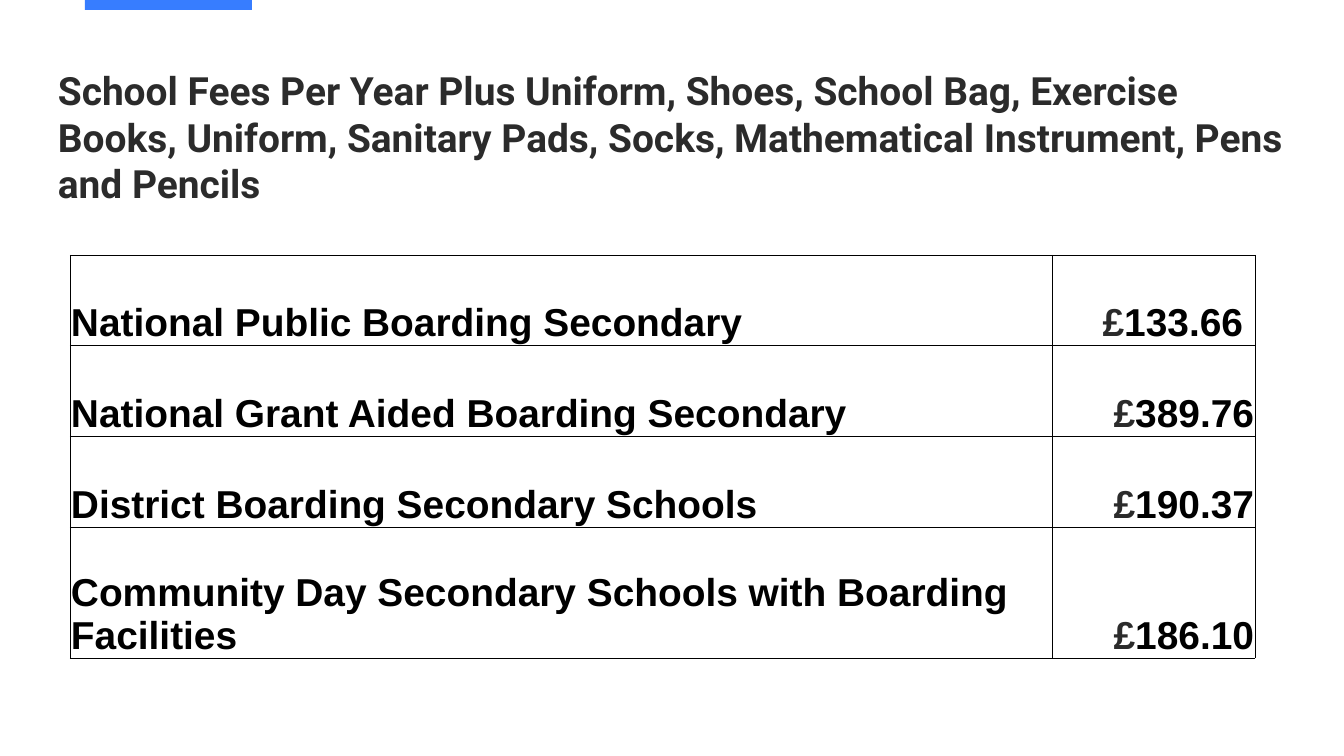
import pptx
import pptx.util
import pptx.dml.color
import pptx.enum.shapes
import pptx.enum.text
import lxml.etree


def px(n):
    return pptx.util.Emu(round(n * 914400 / 70))


def rgb(value):
    return pptx.dml.color.RGBColor.from_string(value)


PP_ALIGN = pptx.enum.text.PP_ALIGN
MSO_ANCHOR = pptx.enum.text.MSO_ANCHOR
NS = "http://schemas.openxmlformats.org/drawingml/2006/main"
BLACK, GREY, BLUE = "000000", "2B2B2B", "377DFF"
FEES = [
    ("National Public Boarding Secondary", "133.66", 90, 12),
    ("National Grant Aided Boarding Secondary", "389.76", 91, 1),
    ("District Boarding Secondary Schools", "190.37", 91, 1),
    ("Community Day Secondary Schools with Boarding Facilities", "186.10", 131, 1),
]

prs = pptx.Presentation()
prs.slide_width, prs.slide_height = px(1344), px(756)
s = prs.slides.add_slide(prs.slide_layouts[6])

bar = s.shapes.add_shape(
    pptx.enum.shapes.MSO_SHAPE.RECTANGLE, px(85), px(0), px(167), px(10))
bar.shadow.inherit = False
bar.fill.solid()
bar.fill.fore_color.rgb = rgb(BLUE)
bar.line.fill.background()

title = s.shapes.add_textbox(px(51), px(65), px(1254), px(143))
tf = title.text_frame
tf.word_wrap = True
tf.vertical_anchor = MSO_ANCHOR.MIDDLE
tf.margin_top = tf.margin_bottom = 0
p = tf.paragraphs[0]
p.text = ("School Fees Per Year Plus Uniform, Shoes, School Bag, Exercise Books, "
          "Uniform, Sanitary Pads, Socks, Mathematical Instrument, Pens and Pencils")
p.font.name = "Roboto"
p.font.size = pptx.util.Pt(40)
p.font.bold = True
p.font.color.rgb = rgb(GREY)

frame = s.shapes.add_table(len(FEES), 2, px(70), px(255), px(1185), px(403))
table = frame.table
table.first_row = table.horz_banding = False
table.columns[0].width, table.columns[1].width = px(982), px(203)

for i, (school, fee, height, right) in enumerate(FEES):
    table.rows[i].height = px(height)
    name_cell, fee_cell = table.cell(i, 0), table.cell(i, 1)
    name_cell.text = school
    p = fee_cell.text_frame.paragraphs[0]
    p.alignment = PP_ALIGN.RIGHT
    for text, colour in (("£", GREY), (fee, BLACK)):
        r = p.add_run()
        r.text = text
        r.font.color.rgb = rgb(colour)
    name_cell.text_frame.paragraphs[0].font.color.rgb = rgb(BLACK)

    for cell, margin in ((name_cell, 1), (fee_cell, right)):
        cell.vertical_anchor = MSO_ANCHOR.BOTTOM
        cell.margin_left = cell.margin_top = px(1)
        cell.margin_right = px(margin)
        cell.margin_bottom = 0
        font = cell.text_frame.paragraphs[0].font
        font.name = "Arial"
        font.size = pptx.util.Pt(40)
        font.bold = True
        tcPr = cell._tc.get_or_add_tcPr()
        for side in ("lnL", "lnR", "lnT", "lnB"):
            ln = lxml.etree.SubElement(tcPr, f"{{{NS}}}{side}", w="6350")
            fill = lxml.etree.SubElement(ln, f"{{{NS}}}solidFill")
            lxml.etree.SubElement(fill, f"{{{NS}}}srgbClr", val=BLACK)
        cell.fill.background()

prs.save("out.pptx")
